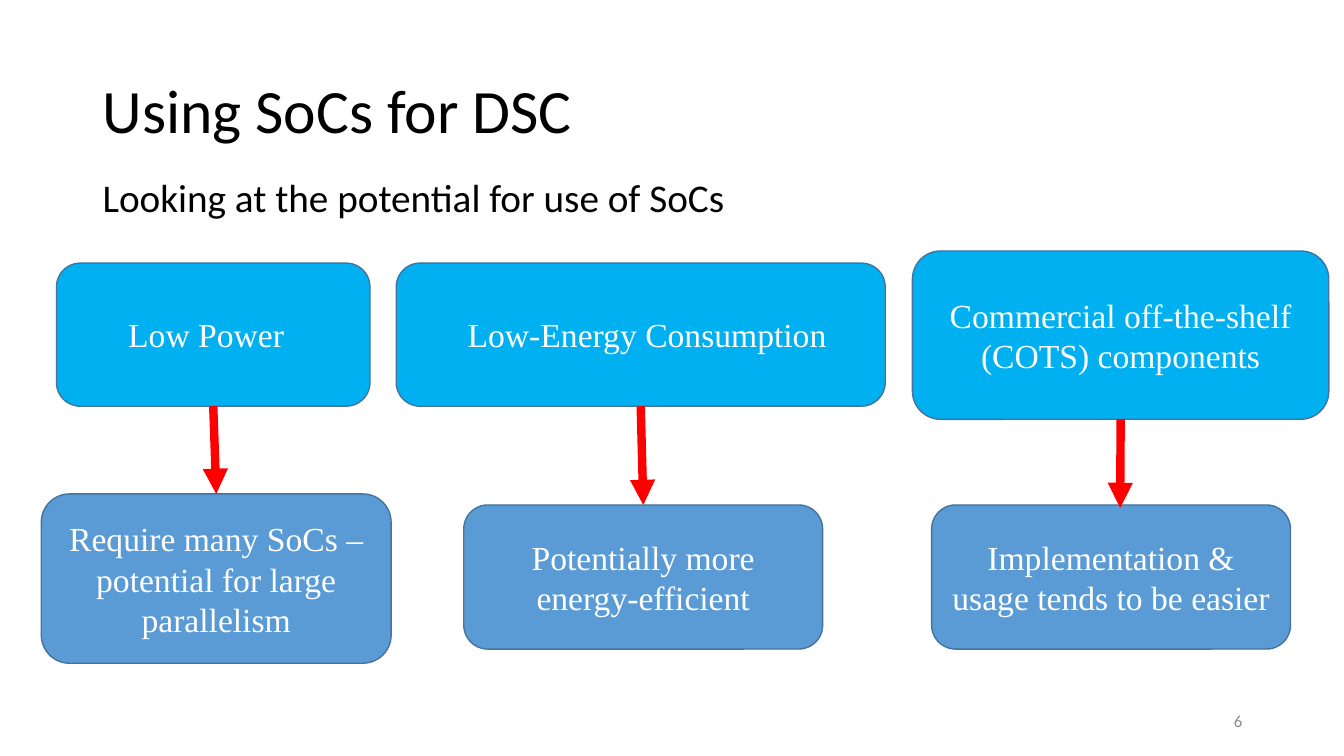
import pptx
import pptx.util
import pptx.dml.color
import pptx.enum.shapes
import pptx.enum.text
import pptx.oxml
import pptx.oxml.ns
from dataclasses import dataclass

Inches = pptx.util.Inches
Pt = pptx.util.Pt
ALIGN = pptx.enum.text.PP_ALIGN
ANCHOR = pptx.enum.text.MSO_ANCHOR


@dataclass(frozen=True)
class Theme:
    heading_font: str = "Calibri"
    box_font: str = "Times New Roman"
    black: str = "000000"
    white: str = "FFFFFF"
    grey: str = "8C8C8C"
    property_fill: str = "00B0F0"
    outcome_fill: str = "5B9BD5"
    outline: str = "43739E"
    arrow: str = "FF0000"
    title_size: int = 44
    body_size: int = 28
    box_size: int = 24
    number_size: int = 12
    outline_width: int = 1
    arrow_width: int = 6


THEME = Theme()


def rgb(value):
    return pptx.dml.color.RGBColor.from_string(value)


def write(shape, text, font, size, color, align, anchor, spacing=1.0):
    tf = shape.text_frame
    tf.word_wrap = True
    tf.vertical_anchor = anchor
    tf.text = text
    p = tf.paragraphs[0]
    p.alignment = align
    p.line_spacing = spacing
    r = p.runs[0]
    r.font.name = font
    r.font.size = Pt(size)
    r.font.color.rgb = rgb(color)
    return p


def add_text(s, box, *style):
    return write(s.shapes.add_textbox(*map(Inches, box)), *style)


def write_box(shape, text, align=ALIGN.CENTER, anchor=ANCHOR.MIDDLE):
    write(shape, text, THEME.box_font, THEME.box_size, THEME.white, align, anchor)


def add_box(s, box, fill, text=None):
    sp = s.shapes.add_shape(
        pptx.enum.shapes.MSO_SHAPE.ROUNDED_RECTANGLE, *map(Inches, box))
    sp.shadow.inherit = False
    sp.fill.solid()
    sp.fill.fore_color.rgb = rgb(fill)
    sp.line.color.rgb = rgb(THEME.outline)
    sp.line.width = Pt(THEME.outline_width)
    if text:
        write_box(sp, text)
    return sp


def add_arrow(s, top, bottom, end=None):
    x, y = end or (0, 0)
    cxn = s.shapes.add_connector(
        pptx.enum.shapes.MSO_CONNECTOR.STRAIGHT,
        Inches(x), Inches(y), Inches(x), Inches(y))
    cxn.begin_connect(top, 2)
    if end is None:
        cxn.end_connect(bottom, 0)
    cxn.line.color.rgb = rgb(THEME.arrow)
    cxn.line.width = Pt(THEME.arrow_width)
    tail = pptx.oxml.parse_xml(
        f'<a:tailEnd {pptx.oxml.ns.nsdecls("a")} type="triangle"/>')
    cxn.line._get_or_add_ln().append(tail)
    effects = pptx.oxml.parse_xml(f'<a:effectLst {pptx.oxml.ns.nsdecls("a")}/>')
    cxn._element.spPr.append(effects)


def add_heading(s, box):
    left, top, width, height = box
    add_text(s, (left, top, width, 1.45), "Using SoCs for DSC",
             THEME.heading_font, THEME.title_size, THEME.black,
             ALIGN.LEFT, ANCHOR.MIDDLE, 0.9)
    body_top = 1.32
    p = add_text(s, (left, top + body_top, width, height - body_top),
                 "Looking at the potential for use of SoCs",
                 THEME.heading_font, THEME.body_size, THEME.black,
                 ALIGN.LEFT, ANCHOR.TOP, 0.9)
    p.space_before = Pt(10)


def add_column(s, property_box, outcome_box, property_text, outcome_text,
               label=None, arrow_end=None):
    top = add_box(s, property_box, THEME.property_fill,
                  None if label else property_text)
    if label:
        dx, width, align = label
        left, y = property_box[:2]
        tb = s.shapes.add_textbox(
            *map(Inches, (left + dx, y + 0.46, width, 0.5)))
        write_box(tb, property_text, align, ANCHOR.TOP)
    bottom = add_box(s, outcome_box, THEME.outcome_fill, outcome_text)
    add_arrow(s, top, bottom, arrow_end)


def add_slide_number(s, box):
    add_text(s, box, "6", THEME.heading_font, THEME.number_size, THEME.grey,
             ALIGN.RIGHT, ANCHOR.MIDDLE)


def main():
    prs = pptx.Presentation()
    prs.slide_width = Inches(13.33)
    prs.slide_height = Inches(7.5)
    s = prs.slides.add_slide(prs.slide_layouts[6])
    add_heading(s, (0.92, 0.4, 11.5, 6.88))
    add_column(s, (0.56, 2.61, 3.11, 1.42), (0.41, 4.9, 3.47, 1.68),
               "Low Power",
               "Require many SoCs – potential for large parallelism",
               label=(-0.15, 3.27, ALIGN.CENTER))
    add_column(s, (3.93, 2.61, 4.85, 1.42), (4.6, 5.01, 3.56, 1.43),
               "Low-Energy Consumption",
               "Potentially more energy-efficient",
               label=(0.61, 4.73, ALIGN.LEFT))
    add_column(s, (9.05, 2.49, 4.13, 1.67), (9.24, 5.01, 3.56, 1.43),
               "Commercial off-the-shelf (COTS) components",
               "Implementation & usage tends to be easier",
               arrow_end=(11.11, 5.04))
    add_slide_number(s, (9.42, 6.95, 3, 0.4))
    prs.save("out.pptx")


if __name__ == "__main__":
    main()
